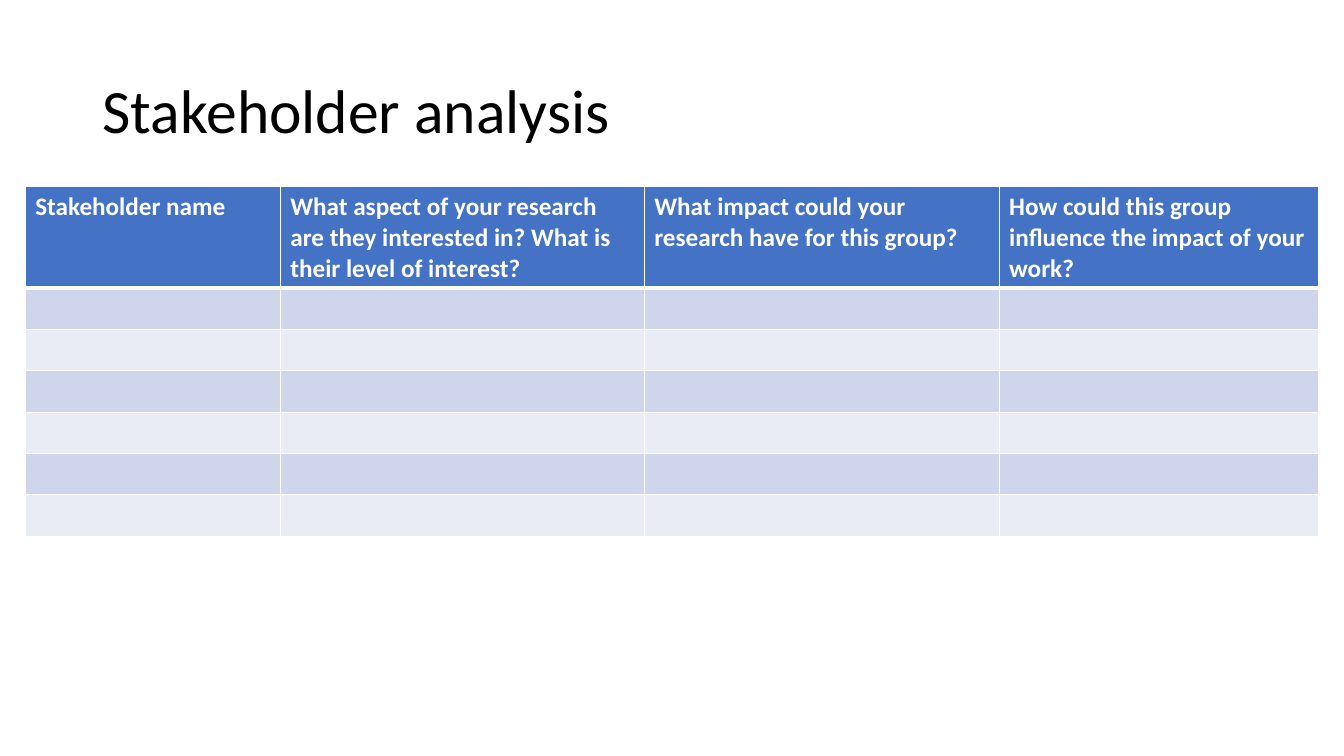
from lxml.etree import SubElement
from pptx import Presentation
from pptx.dml.color import RGBColor
from pptx.enum.text import MSO_ANCHOR
from pptx.oxml.ns import qn
from pptx.util import Inches, Pt

TITLE = "Stakeholder analysis"
QUESTIONS = [
    ("Stakeholder name", 2.53),
    ("What aspect of your research are they interested in? What is their level of interest?", 3.61),
    ("What impact could your research have for this group?", 3.52),
    ("How could this group influence the impact of your work?", 3.17),
]
STAKEHOLDER_ROWS = 6
HEADER_HEIGHT, ROW_HEIGHT = 1.01, 0.41
TITLE_BOX = (0.92, 0.4, 11.5, 1.45)
GRID_LEFT, GRID_TOP = 0.25, 1.85
FONT = "Calibri"
WHITE, BLACK, HEADER_BLUE = "FFFFFF", "000000", "4472C4"
BANDS = ["CFD5EA", "E9EBF5"]


def color(code):
    return RGBColor.from_string(code)


def write(frame, text, size, code, bold=False):
    frame.text = text
    font = frame.paragraphs[0].runs[0].font
    font.name, font.size, font.bold = FONT, Pt(size), bold
    font.color.rgb = color(code)


def set_borders(cell, top, bottom):
    properties = cell._tc.get_or_add_tcPr()
    for side, width in (("L", 1), ("R", 1), ("T", top), ("B", bottom)):
        line = SubElement(properties, qn(f"a:ln{side}"), w=str(Pt(width)))
        SubElement(SubElement(line, qn("a:solidFill")), qn("a:srgbClr"), val=WHITE)


def add_title(slide):
    frame = slide.shapes.add_textbox(*map(Inches, TITLE_BOX)).text_frame
    frame.word_wrap = True
    frame.vertical_anchor = MSO_ANCHOR.MIDDLE
    write(frame, TITLE, 44, BLACK)
    frame.paragraphs[0].line_spacing = 0.9


def add_grid(slide):
    widths = [width for _, width in QUESTIONS]
    heights = [HEADER_HEIGHT] + [ROW_HEIGHT] * STAKEHOLDER_ROWS
    grid = slide.shapes.add_table(
        len(heights), len(widths), Inches(GRID_LEFT), Inches(GRID_TOP),
        Inches(sum(widths)), Inches(sum(heights)),
    ).table
    for column, width in zip(grid.columns, widths):
        column.width = Inches(width)
    for index, (row, height) in enumerate(zip(grid.rows, heights)):
        row.height = Inches(height)
        fill = BANDS[(index - 1) % 2] if index else HEADER_BLUE
        for cell in row.cells:
            set_borders(cell, 3 if index == 1 else 1, 3 if index == 0 else 1)
            cell.fill.solid()
            cell.fill.fore_color.rgb = color(fill)
    for cell, (question, _) in zip(grid.rows[0].cells, QUESTIONS):
        write(cell.text_frame, question, 18, WHITE, bold=True)


def main():
    deck = Presentation()
    deck.slide_width, deck.slide_height = Inches(13.33), Inches(7.5)
    slide = deck.slides.add_slide(deck.slide_layouts[6])
    add_title(slide)
    add_grid(slide)
    deck.save("out.pptx")


if __name__ == "__main__":
    main()
